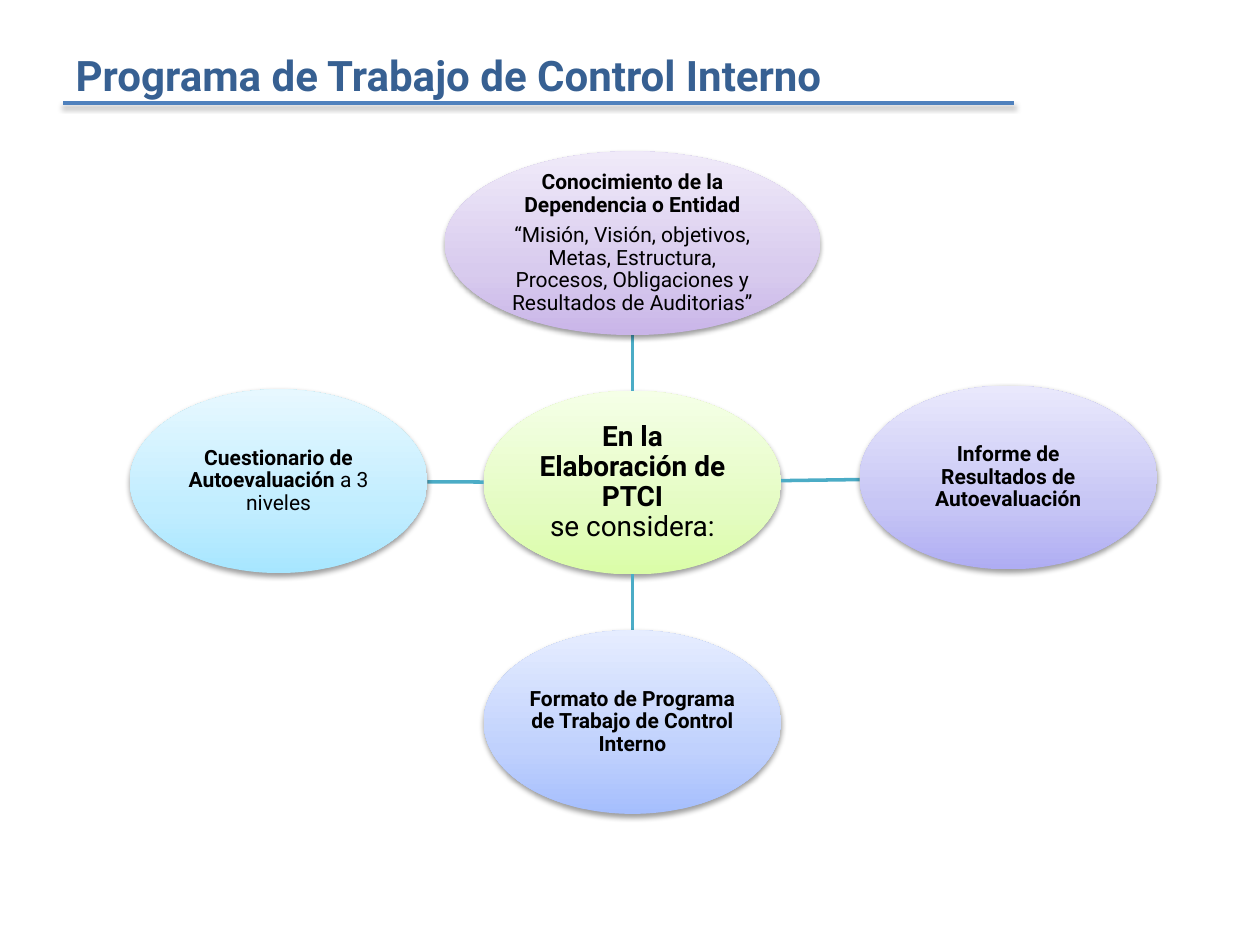
from copy import deepcopy
from dataclasses import dataclass
from math import hypot

from lxml.etree import SubElement
from pptx import Presentation
from pptx.dml.color import RGBColor
from pptx.enum.shapes import MSO_CONNECTOR as Connector, MSO_SHAPE as Shape
from pptx.enum.text import MSO_ANCHOR as Anchor, MSO_AUTO_SIZE as AutoSize, PP_ALIGN as Align
from pptx.oxml.ns import qn
from pptx.util import Pt


@dataclass(frozen=True)
class Theme:
    """Colours, font and type sizes of the slide."""
    font: str = "Roboto"
    title: str = "376092"
    rule: str = "4F81BD"
    link: str = "4BACC6"
    text: str = "000000"
    title_size: int = 24
    hub_size: int = 16
    node_size: int = 12
    green: tuple = ("DAFDA7", "E4FCC2", "F5FFE7")
    purple: tuple = ("C9B5E8", "D8CBEE", "F0EAF9")
    violet: tuple = ("AFADF3", "C7C6F5", "E9E8FC")
    blue: tuple = ("A5BEFD", "C0D1FD", "E6EDFF")
    cyan: tuple = ("A7E6FF", "C1EDFF", "E7F8FF")


@dataclass(frozen=True)
class Node:
    """An ellipse given by its centre, colours and paragraphs of (text, bold) spans."""
    x: float
    y: float
    colors: tuple
    paragraphs: list
    width: float = 170
    height: float = 105

    def edge_toward(self, other):
        """Return the point of the outline that faces another node."""
        dx, dy = other.x - self.x, other.y - self.y
        scale = 1 / hypot(dx / (self.width / 2), dy / (self.height / 2))
        return self.x + dx * scale, self.y + dy * scale


THEME = Theme()
HUB = Node(361.4, 275.8, THEME.green,
           [[("En la Elaboración de PTCI", True)], [("se considera:", False)]])
SATELLITES = [
    Node(HUB.x, HUB.y - 136.8, THEME.purple, [
        [("Conocimiento de la Dependencia o Entidad", True)],
        [("“Misión, Visión, objetivos, Metas, Estructura, Procesos, "
          "Obligaciones y Resultados de Auditorias”", False)]], width=214.6),
    Node(576.2, 272.9, THEME.violet,
         [[("Informe de Resultados de Autoevaluación", True)]]),
    Node(HUB.x, HUB.y + 136.8, THEME.blue,
         [[("Formato de Programa de Trabajo de Control Interno", True)]]),
    Node(159.2, 275, THEME.cyan,
         [[("Cuestionario de Autoevaluación", True), (" a 3 niveles", False)]]),
]


def add_text(para, text, *, size, color=THEME.text, bold=False):
    """Append a formatted span to a paragraph."""
    span = para.add_run()
    span.text = text
    span.font.name = THEME.font
    span.font.size = Pt(size)
    span.font.bold = bold
    span.font.color.rgb = RGBColor.from_string(color)


def set_effects(shape, shadow):
    """Give a shape a soft shadow below it, or no effect at all."""
    effects = SubElement(shape._element.spPr, qn("a:effectLst"))
    if shadow:
        outer = SubElement(effects, qn("a:outerShdw"), blurRad=str(Pt(3.1)),
                           dist=str(Pt(1.6)), dir="5400000", rotWithShape="0")
        color = SubElement(outer, qn("a:srgbClr"), val="000000")
        SubElement(color, qn("a:alpha"), val="38000")


def fill_gradient(shape, colors):
    """Fill a shape with three colours running from bottom to top."""
    shape.fill.gradient()
    shape.fill.gradient_angle = 90
    stop_list = shape._element.spPr.find(".//" + qn("a:gsLst"))
    stop_list.append(deepcopy(stop_list[-1]))
    for stop, color, position in zip(shape.fill.gradient_stops, colors, (0, 0.35, 1)):
        stop.color.rgb = RGBColor.from_string(color)
        stop.position = position


def add_line(page, start, end, *, color, shadow=False):
    """Draw a straight line between two points."""
    line = page.shapes.add_connector(Connector.STRAIGHT, *map(Pt, start + end))
    line.line.color.rgb = RGBColor.from_string(color)
    line.line.width = Pt(2)
    set_effects(line, shadow)


def add_node(page, node, *, size, space_after=0):
    """Draw an ellipse with its centred text."""
    ellipse = page.shapes.add_shape(
        Shape.OVAL, Pt(node.x - node.width / 2), Pt(node.y - node.height / 2),
        Pt(node.width), Pt(node.height))
    fill_gradient(ellipse, node.colors)
    ellipse.line.fill.background()
    set_effects(ellipse, True)
    frame = ellipse.text_frame
    frame.word_wrap = True
    frame.vertical_anchor = Anchor.MIDDLE
    frame.margin_left = frame.margin_right = Pt(0.7)
    frame.margin_top = frame.margin_bottom = Pt(0.7)
    for index, spans in enumerate(node.paragraphs):
        para = frame.add_paragraph() if index else frame.paragraphs[0]
        para.alignment = Align.CENTER
        para.line_spacing = 0.9
        para.space_after = Pt(space_after)
        for text, bold in spans:
            add_text(para, text, size=size, bold=bold)


def add_title(page, text):
    """Place the slide title and the rule under it."""
    title = page.shapes.title
    title.left, title.top, title.width, title.height = map(Pt, (36, 21.6, 648, 41.8))
    frame = title.text_frame
    frame.auto_size = AutoSize.NONE
    frame.vertical_anchor = Anchor.MIDDLE
    frame.paragraphs[0].alignment = Align.LEFT
    add_text(frame.paragraphs[0], text, size=THEME.title_size, color=THEME.title, bold=True)
    add_line(page, (36, 59), (579.6, 59), color=THEME.rule, shadow=True)


def main():
    """Build the slide and save the deck."""
    deck = Presentation()
    deck.slide_width, deck.slide_height = Pt(720), Pt(540)
    page = deck.slides.add_slide(deck.slide_layouts.get_by_name("Title Only"))
    add_node(page, HUB, size=THEME.hub_size)
    for node in SATELLITES:
        add_line(page, HUB.edge_toward(node), node.edge_toward(HUB), color=THEME.link)
        add_node(page, node, size=THEME.node_size, space_after=4.2)
    add_title(page, "Programa de Trabajo de Control Interno")
    deck.save("out.pptx")


if __name__ == "__main__":
    main()
